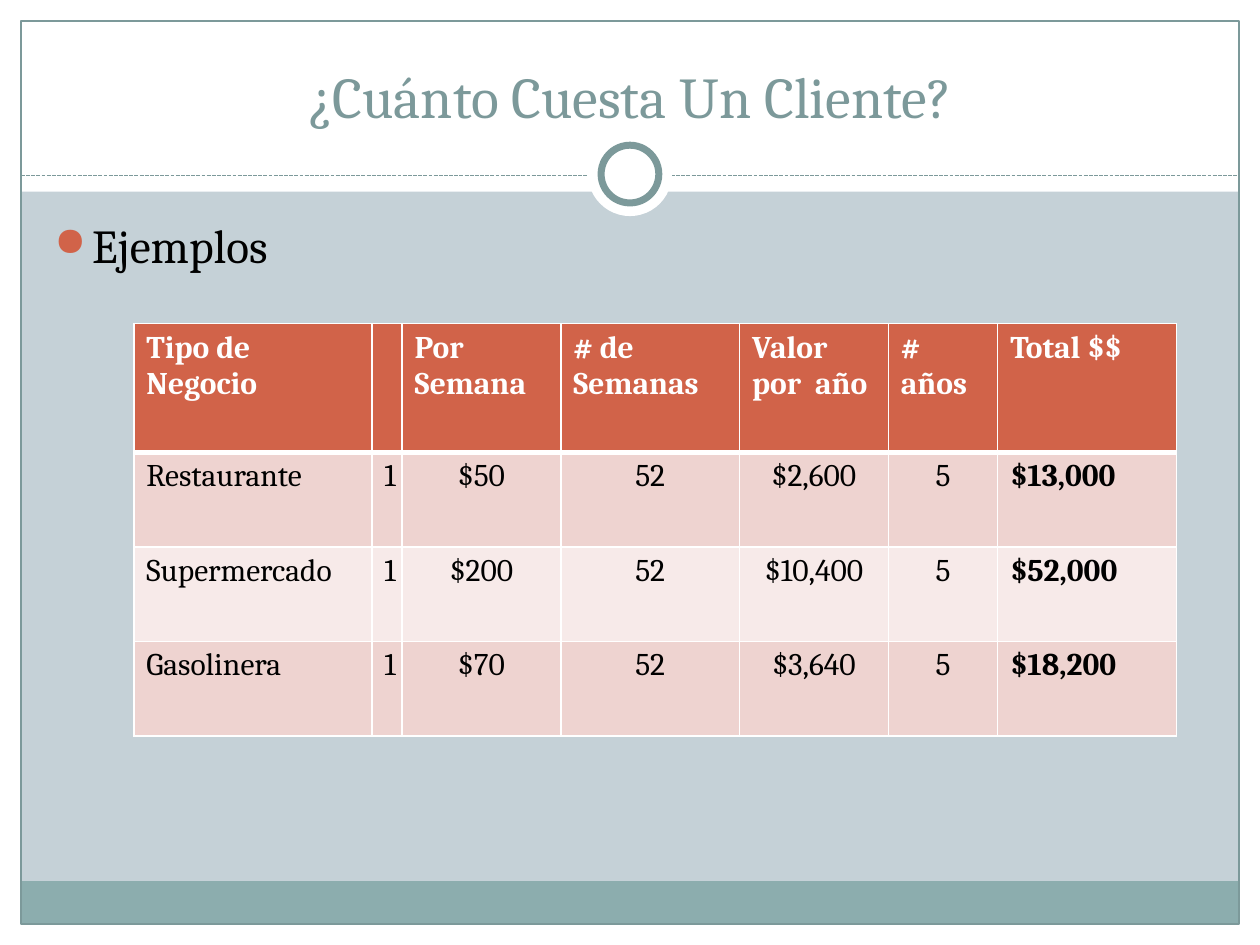
from lxml import etree
from pptx import Presentation
from pptx.dml.color import RGBColor
from pptx.enum.dml import MSO_LINE
from pptx.enum.shapes import MSO_CONNECTOR, MSO_SHAPE
from pptx.enum.text import MSO_ANCHOR, PP_ALIGN
from pptx.oxml.ns import qn
from pptx.util import Pt

RECT, OVAL = MSO_SHAPE.RECTANGLE, MSO_SHAPE.OVAL
STRAIGHT, DASH = MSO_CONNECTOR.STRAIGHT, MSO_LINE.SQUARE_DOT
LEFT, CENTER = PP_ALIGN.LEFT, PP_ALIGN.CENTER
BOTTOM = MSO_ANCHOR.BOTTOM

FONT = "Cambria"
WHITE, BLACK = "FFFFFF", "000000"
SKY, TEAL, SLATE, RUST = "C5D1D7", "8CADAE", "7C999A", "D16349"
BANDS = ("EED3D0", "F7EAE9")

W, H = 720, 540
EDGE = 12  # white margin around the slide

COL_WIDTHS = (136, 17.3, 90.7, 102.2, 85, 62.5, 102.2)
ROW_HEIGHTS = (73.5, 54, 54, 54)
ROWS = (
    ("Tipo de Negocio", "", "Por Semana", "# de Semanas", "Valor por  año", "# años", "Total $$"),
    ("Restaurante", "1", "$50", "52", "$2,600", "5", "$13,000"),
    ("Supermercado", "1", "$200", "52", "$10,400", "5", "$52,000"),
    ("Gasolinera", "1", "$70", "52", "$3,640", "5", "$18,200"),
)


def rgb(color):
    return RGBColor.from_string(color)


def paint(fill, color):
    fill.solid()
    fill.fore_color.rgb = rgb(color)


def add_shape(s, kind, box, fill=None, line=None, weight=0.75):
    sp = s.shapes.add_shape(kind, *map(Pt, box))
    sp.shadow.inherit = False
    if fill:
        paint(sp.fill, fill)
    else:
        sp.fill.background()
    if line:
        sp.line.color.rgb = rgb(line)
        sp.line.width = Pt(weight)
    else:
        sp.line.fill.background()
    return sp


def add_dashed_line(s, x1, x2, y):
    line = s.shapes.add_connector(STRAIGHT, Pt(x1), Pt(y), Pt(x2), Pt(y))
    line.line.color.rgb = rgb(SLATE)
    line.line.width = Pt(0.75)
    line.line.dash_style = DASH
    etree.SubElement(line._element.spPr, qn("a:effectLst"))


def write(p, text, size, color, bold=False, align=LEFT):
    p.alignment = align
    r = p.add_run()
    r.text = text
    formats = {"name": FONT, "size": Pt(size), "bold": bold}
    for name, value in formats.items():
        setattr(r.font, name, value)
    r.font.color.rgb = rgb(color)


def add_backdrop(s):
    # White margins and the title band
    for box in ((0, H - EDGE, W, EDGE), (0, 0, W, 109.5),
                (0, 0, EDGE, H), (W - EDGE, 0, EDGE, H)):
        add_shape(s, RECT, box, WHITE)
    # Footer bar, frame and divider
    inner = W - 2 * EDGE
    add_shape(s, RECT, (EDGE, 503.5, inner, 24.5), TEAL)
    add_shape(s, RECT, (EDGE, EDGE, inner, H - 2 * EDGE), line=SLATE)
    add_dashed_line(s, EDGE, W - EDGE, 100.5)
    # Ring on the divider
    for size, line in ((48, None), (33, SLATE)):
        box = ((W - size) / 2, 99.5 - size / 2, size, size)
        add_shape(s, OVAL, box, WHITE, line, 4)


def set_title(s, text):
    title = s.shapes.title
    # In front of the title band
    s.shapes._spTree.append(title._element)
    frame = {"left": 24, "top": 18, "width": 672, "height": 60}
    for name, value in frame.items():
        setattr(title, name, Pt(value))
    title.text_frame.vertical_anchor = BOTTOM
    write(title.text_frame.paragraphs[0], text, 33, SLATE, align=CENTER)


def add_bullet(s, text):
    tf = s.shapes.add_textbox(Pt(24), Pt(120), Pt(670), Pt(360)).text_frame
    tf.word_wrap = True
    p = tf.paragraphs[0]
    write(p, text, 27, BLACK)
    pPr = p._p.get_or_add_pPr()
    indent = Pt(21.6)
    pPr.set("marL", str(indent))
    pPr.set("indent", str(-indent))
    before = etree.SubElement(pPr, qn("a:spcBef"))
    etree.SubElement(before, qn("a:spcPct"), val="20000")
    color = etree.SubElement(pPr, qn("a:buClr"))
    etree.SubElement(color, qn("a:srgbClr"), val=RUST)
    etree.SubElement(pPr, qn("a:buSzPct"), val="85000")
    etree.SubElement(pPr, qn("a:buChar"), char="●")


def set_border(cell, side, weight):
    ln = etree.SubElement(cell._tc.get_or_add_tcPr(), qn("a:ln" + side), w=str(Pt(weight)))
    fill = etree.SubElement(ln, qn("a:solidFill"))
    etree.SubElement(fill, qn("a:srgbClr"), val=WHITE)


def add_cost_table(s):
    table = s.shapes.add_table(len(ROWS), len(COL_WIDTHS), Pt(76.5), Pt(185),
                               Pt(sum(COL_WIDTHS)), Pt(sum(ROW_HEIGHTS))).table
    for column, width in zip(table.columns, COL_WIDTHS):
        column.width = Pt(width)
    for row, height in zip(table.rows, ROW_HEIGHTS):
        row.height = Pt(height)
    last = len(COL_WIDTHS) - 1
    for i, texts in enumerate(ROWS):
        header = i == 0
        for j, text in enumerate(texts):
            cell = table.cell(i, j)
            # The rule under the header is thicker
            for side in "LRTB":
                thick = (i, side) in ((0, "B"), (1, "T"))
                set_border(cell, side, 3 if thick else 1)
            paint(cell.fill, RUST if header else BANDS[(i - 1) % 2])
            if text:
                write(cell.text_frame.paragraphs[0], text, 18,
                      WHITE if header else BLACK,
                      bold=header or j == last,
                      align=LEFT if header or j in (0, last) else CENTER)


def main():
    prs = Presentation()
    prs.slide_width, prs.slide_height = Pt(W), Pt(H)
    s = prs.slides.add_slide(prs.slide_layouts[5])
    paint(s.background.fill, SKY)
    add_backdrop(s)
    set_title(s, "¿Cuánto Cuesta Un Cliente?")
    add_bullet(s, "Ejemplos")
    add_cost_table(s)
    prs.save("out.pptx")


if __name__ == "__main__":
    main()
